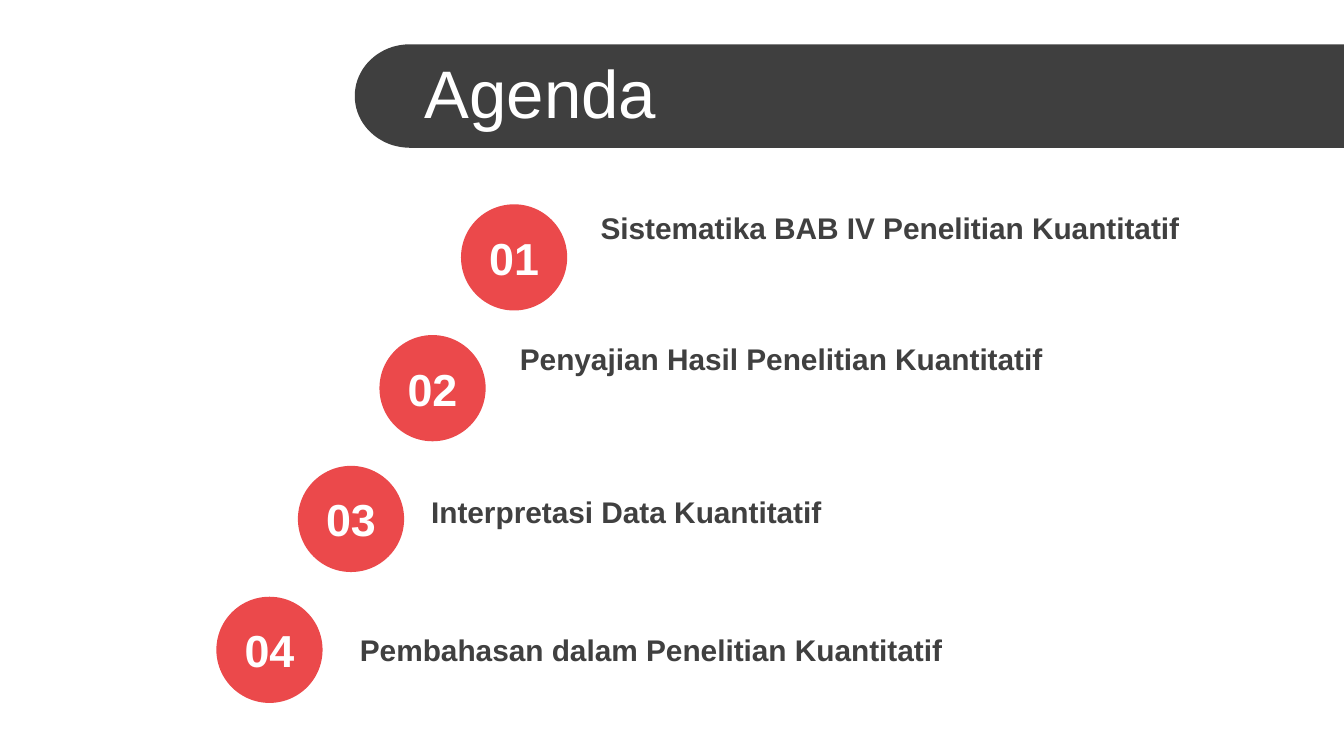
from math import cos, pi, sin
from typing import NamedTuple

from pptx import Presentation
from pptx.dml.color import RGBColor
from pptx.enum.shapes import MSO_SHAPE
from pptx.enum.text import MSO_ANCHOR, MSO_AUTO_SIZE, PP_ALIGN
from pptx.util import Inches, Pt

DARK = RGBColor(0x3F, 0x3F, 0x3F)
TEXT = RGBColor(0x40, 0x40, 0x40)
RED = RGBColor(0xEB, 0x49, 0x4B)
WHITE = RGBColor(0xFF, 0xFF, 0xFF)

TITLE_FONT = dict(name="Arial", size=Pt(36), bold=False)
NUMBER_FONT = dict(name="Arial", size=Pt(24), bold=True)
LABEL_FONT = dict(name="Arial", size=Pt(16), bold=True)

SLIDE_W = 10
SLIDE_H = SLIDE_W * 9 / 16
CIRCLE = 0.79
FIRST_X, FIRST_Y = 3.43, 1.52
LAST_X, LAST_Y = 1.61, 4.44
ARC_STEPS = 40


class AgendaItem(NamedTuple):
    text: str
    x: float
    y: float


ITEMS = [
    AgendaItem("Sistematika BAB IV Penelitian Kuantitatif", 4.37, 1.51),
    AgendaItem("Penyajian Hasil Penelitian Kuantitatif", 3.77, 2.48),
    AgendaItem("Interpretasi Data Kuantitatif", 3.11, 3.62),
    AgendaItem("Pembahasan dalam Penelitian Kuantitatif", 2.58, 4.65),
]
STEP_X = (LAST_X - FIRST_X) / (len(ITEMS) - 1)
STEP_Y = (LAST_Y - FIRST_Y) / (len(ITEMS) - 1)


def write(sp, text: str, font: dict, color: RGBColor, align=PP_ALIGN.LEFT) -> None:
    tf = sp.text_frame
    tf.auto_size = MSO_AUTO_SIZE.NONE
    tf.word_wrap = True
    tf.vertical_anchor = MSO_ANCHOR.MIDDLE
    p = tf.paragraphs[0]
    p.alignment = align
    r = p.add_run()
    r.text = text
    for key, value in font.items():
        setattr(r.font, key, value)
    r.font.color.rgb = color


def paint(sp, color: RGBColor) -> None:
    sp.shadow.inherit = False
    sp.fill.solid()
    sp.fill.fore_color.rgb = color
    sp.line.fill.background()


def add_banner(s, left: float, top: float, height: float, radius: float):
    ry = height / 2
    angles = [pi / 2 + pi * i / ARC_STEPS for i in range(ARC_STEPS + 1)]
    arc = [(Inches(left + radius + radius * cos(a)), Inches(top + ry + ry * sin(a)))
           for a in angles]
    builder = s.shapes.build_freeform(Inches(SLIDE_W), Inches(top))
    builder.add_line_segments([(Inches(SLIDE_W), Inches(top + height)), *arc], close=True)
    sp = builder.convert_to_shape()
    paint(sp, DARK)
    return sp


def add_title(s, text: str) -> None:
    title = s.shapes.title
    frame = dict(left=3.06, top=0.37, width=6.94, height=0.63)
    for key, value in frame.items():
        setattr(title, key, Inches(value))
    write(title, text, TITLE_FONT, WHITE)
    banner = add_banner(s, 2.64, 0.33, 0.77, 0.41)
    title.element.addprevious(banner.element)


def add_number(s, index: int) -> None:
    sp = s.shapes.add_shape(
        MSO_SHAPE.OVAL,
        Inches(FIRST_X + index * STEP_X), Inches(FIRST_Y + index * STEP_Y),
        Inches(CIRCLE), Inches(CIRCLE))
    paint(sp, RED)
    for side in ("left", "top", "right", "bottom"):
        setattr(sp.text_frame, f"margin_{side}", 0)
    write(sp, f"{index + 1:02d}", NUMBER_FONT, WHITE, PP_ALIGN.CENTER)


def add_label(s, item: AgendaItem) -> None:
    sp = s.shapes.add_textbox(Inches(item.x), Inches(item.y), Inches(5.04), Inches(0.37))
    write(sp, item.text, LABEL_FONT, TEXT)


def main() -> None:
    prs = Presentation()
    prs.slide_width, prs.slide_height = Inches(SLIDE_W), Inches(SLIDE_H)
    s = prs.slides.add_slide(prs.slide_layouts[5])
    add_title(s, "Agenda")
    for index, item in enumerate(ITEMS):
        add_number(s, index)
        add_label(s, item)
    prs.save("out.pptx")


if __name__ == "__main__":
    main()
